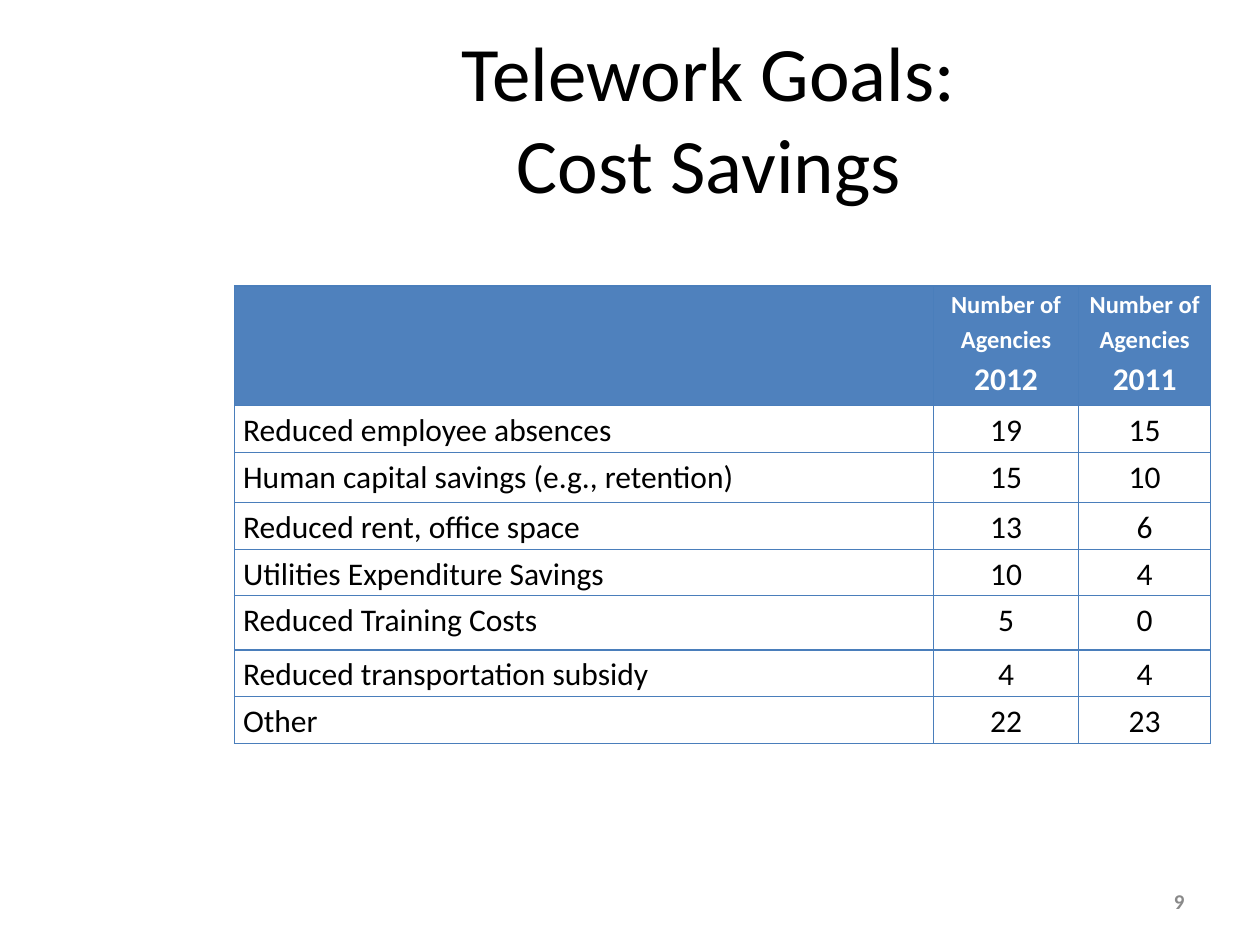
from lxml import etree
from pptx import Presentation
from pptx.dml.color import RGBColor
from pptx.enum.text import MSO_ANCHOR, MSO_AUTO_SIZE, PP_ALIGN
from pptx.oxml.ns import qn
from pptx.util import Inches, Pt

COLORS = {"text": "000000", "header": "4F81BD", "header_text": "FFFFFF",
          "border": "4A7EBB", "number": "898989"}
COL_WIDTHS = [5.55, 1.15, 1.05]
ROW_HEIGHTS = [0.95, 0.37, 0.4, 0.37, 0.37, 0.43, 0.37, 0.37]
YEARS = ["2012", "2011"]
SAVINGS = [
    ("Reduced employee absences", 19, 15),
    ("Human capital savings (e.g., retention)", 15, 10),
    ("Reduced rent, office space", 13, 6),
    ("Utilities Expenditure Savings", 10, 4),
    ("Reduced Training Costs", 5, 0),
    ("Reduced transportation subsidy", 4, 4),
    ("Other", 22, 23),
]


class SlideBuilder:
    """Holds the font and the current slide."""

    def __init__(self, slide, font="Calibri"):
        self.s = slide
        self.font = font

    def format(self, p, size, color="text", bold=False, align=PP_ALIGN.LEFT, spacing=None):
        p.alignment = align
        if spacing:
            p.line_spacing = spacing
        values = {"name": self.font, "size": Pt(size), "bold": bold}
        for r in p.runs:
            for name, value in values.items():
                setattr(r.font, name, value)
            r.font.color.rgb = RGBColor.from_string(COLORS[color])

    def frame(self, sp, text, **style):
        tf = sp.text_frame
        tf.text = text
        values = {"word_wrap": True, "auto_size": MSO_AUTO_SIZE.NONE,
                  "vertical_anchor": MSO_ANCHOR.MIDDLE}
        for name, value in values.items():
            setattr(tf, name, value)
        self.format(tf.paragraphs[0], **style)

    def title(self, text, left, top, width, height):
        sp = self.s.shapes.title
        box = {"left": left, "top": top, "width": width, "height": height}
        for name, value in box.items():
            setattr(sp, name, Inches(value))
        self.frame(sp, text, size=44, align=PP_ALIGN.CENTER)

    def slide_number(self, text, *box):
        sp = self.s.shapes.add_textbox(*map(Inches, box))
        self.frame(sp, text, size=12, color="number", bold=True, align=PP_ALIGN.RIGHT)

    def borders(self, cell, width=0.75):
        tcPr = cell._tc.get_or_add_tcPr()
        for side in ("lnL", "lnR", "lnT", "lnB"):
            ln = etree.SubElement(tcPr, qn(f"a:{side}"), w=str(Pt(width)))
            fill = etree.SubElement(ln, qn("a:solidFill"))
            etree.SubElement(fill, qn("a:srgbClr"), val=COLORS["border"])

    def cell(self, cell, lines, header=False, align=PP_ALIGN.CENTER):
        """Fill a cell with (text, size) lines."""
        margins = {"margin_left": 0.07, "margin_right": 0.07,
                   "margin_top": 0, "margin_bottom": 0}
        for name, value in margins.items():
            setattr(cell, name, Inches(value))
        self.borders(cell)
        if header:
            cell.fill.solid()
            cell.fill.fore_color.rgb = RGBColor.from_string(COLORS["header"])
        else:
            cell.fill.background()
        tf = cell.text_frame
        tf.text = "\n".join(text for text, _ in lines)
        for p, (_, size) in zip(tf.paragraphs, lines):
            self.format(p, size, "header_text" if header else "text", header, align, 1.15)

    def table(self, left, top):
        size = (sum(COL_WIDTHS), sum(ROW_HEIGHTS))
        table = self.s.shapes.add_table(len(ROW_HEIGHTS), len(COL_WIDTHS),
                                        *map(Inches, (left, top, *size))).table
        for column, width in zip(table.columns, COL_WIDTHS):
            column.width = Inches(width)
        for row, height in zip(table.rows, ROW_HEIGHTS):
            row.height = Inches(height)
        self.cell(table.cell(0, 0), [], header=True)
        for col, year in enumerate(YEARS, 1):
            self.cell(table.cell(0, col), [("Number of Agencies", 14), (year, 18)], header=True)
        for row, values in enumerate(SAVINGS, 1):
            for col, value in enumerate(values):
                align = PP_ALIGN.CENTER if col else PP_ALIGN.LEFT
                self.cell(table.cell(row, col), [(str(value), 18)], align=align)


def main():
    prs = Presentation()
    prs.slide_width, prs.slide_height = Inches(10), Inches(7.5)
    builder = SlideBuilder(prs.slides.add_slide(prs.slide_layouts[5]))
    builder.title("Telework Goals:\vCost Savings", 1.75, 0.3, 7.75, 1.25)
    builder.table(1.86, 2.27)
    builder.slide_number("9", 7.92, 6.95, 1.58, 0.4)
    prs.save("out.pptx")


if __name__ == "__main__":
    main()
